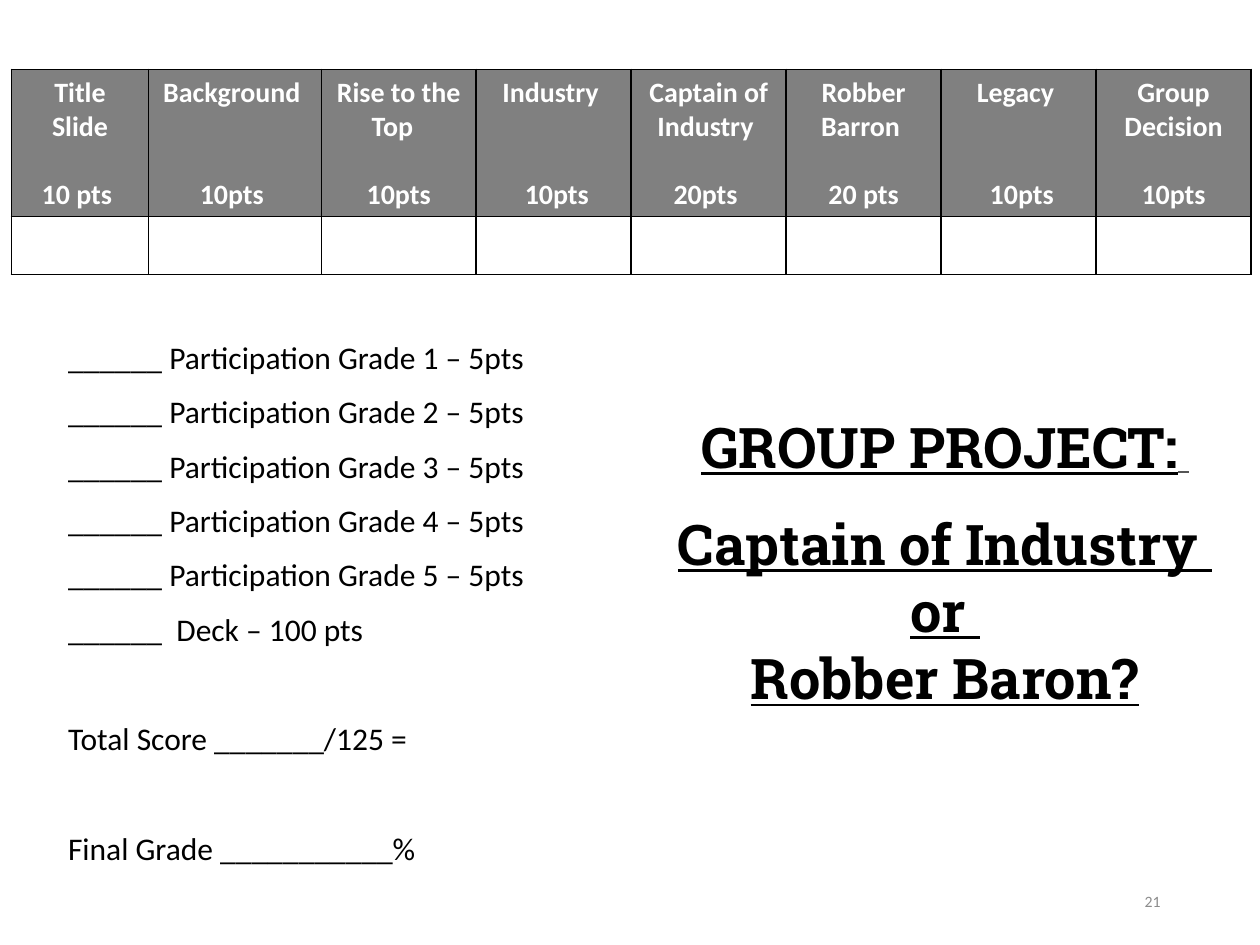
import pptx
import pptx.util
import pptx.dml.color
import pptx.enum.text
import pptx.oxml
import pptx.oxml.ns
import lxml.etree

Inches, Pt = pptx.util.Inches, pptx.util.Pt
RGBColor = pptx.dml.color.RGBColor
ALIGN = pptx.enum.text.PP_ALIGN
ANCHOR = pptx.enum.text.MSO_ANCHOR
NO_AUTOFIT = pptx.enum.text.MSO_AUTO_SIZE.NONE

BLACK = RGBColor(0x00, 0x00, 0x00)
WHITE = RGBColor(0xFF, 0xFF, 0xFF)
HEADER_GRAY = RGBColor(0x80, 0x80, 0x80)
NUMBER_GRAY = RGBColor(0x8C, 0x8C, 0x8C)
SPACE_GRAY = RGBColor(0x55, 0x55, 0x55)

# Content: rubric columns as (criterion, points, width)
RUBRIC = [
    ("Title Slide", "10 pts ", 1.09),
    ("Background ", "10pts ", 1.37),
    ("Rise to the Top  ", "10pts", 1.23),
    ("Industry ", " 10pts", 1.23),
    ("Captain of Industry ", "20pts ", 1.23),
    ("Robber Barron ", " 20 pts ", 1.23),
    ("Legacy ", " 10pts", 1.23),
    ("Group Decision", " 10pts ", 1.23),
]
ROW_HEIGHTS = [1.17, 0.46]
HEADER_LINE = 19.5  # height of one 16 pt line, in points

GRADES = [f"______ Participation Grade {n} – 5pts" for n in range(1, 6)]
GRADES.append("______  Deck – 100 pts")
TOTALS = ["Total Score _______/125 =", "Final Grade ___________%"]
TOTAL_GAP = 31.5  # one list line with its spacing, in points

TITLE_LINES = ["GROUP PROJECT:", "Captain of Industry ", "or ", "Robber Baron?"]
SLIDE_NUMBER = "21"

# Text formats
HEADER_FONT = {"name": "Calibri", "size": Pt(16), "bold": True}
LIST_FONT = {"name": "Calibri", "size": Pt(18)}
TITLE_FONT = {"name": "Roboto Slab", "size": Pt(32), "bold": True, "underline": True}
NUMBER_FONT = {"name": "Calibri", "size": Pt(9)}


def set_attributes(target, values):
    for name, value in values.items():
        setattr(target, name, value)


def add_run(paragraph, text, font, color):
    run = paragraph.add_run()
    run.text = text
    set_attributes(run.font, font)
    run.font.color.rgb = color


def add_paragraph(frame, index, text, font, color, **layout):
    paragraph = frame.add_paragraph() if index else frame.paragraphs[0]
    set_attributes(paragraph, layout)
    add_run(paragraph, text, font, color)
    return paragraph


def place(shape, left, top, width, height, anchor):
    set_attributes(shape, {"left": Inches(left), "top": Inches(top),
                           "width": Inches(width), "height": Inches(height)})
    set_attributes(shape.text_frame, {"word_wrap": True, "auto_size": NO_AUTOFIT,
                                      "vertical_anchor": anchor})
    return shape.text_frame


def format_cell(cell, fill):
    properties = cell._tc.get_or_add_tcPr()
    for side in ("lnL", "lnR", "lnT", "lnB"):
        line = pptx.oxml.parse_xml(
            f'<a:{side} {pptx.oxml.ns.nsdecls("a")} w="{Pt(1)}">'
            f'<a:solidFill><a:srgbClr val="{BLACK}"/></a:solidFill></a:{side}>')
        properties.append(line)
    cell.fill.solid()
    cell.fill.fore_color.rgb = fill


def add_rubric(slide):
    table = slide.shapes.add_table(
        len(ROW_HEIGHTS), len(RUBRIC), Inches(0.09), Inches(0.55),
        Inches(sum(width for _, _, width in RUBRIC)), Inches(sum(ROW_HEIGHTS))).table
    table.horz_banding = False
    for row, height in zip(table.rows, ROW_HEIGHTS):
        row.height = Inches(height)
    for index, (criterion, points, width) in enumerate(RUBRIC):
        table.columns[index].width = Inches(width)
        header = table.cell(0, index)
        format_cell(header, HEADER_GRAY)
        format_cell(table.cell(1, index), WHITE)
        header.margin_bottom = Inches(0.03)
        # Names of several words wrap to two lines; points sit on the fourth
        name_lines = 2 if " " in criterion.strip() else 1
        add_paragraph(header.text_frame, 0, criterion, HEADER_FONT, WHITE,
                      alignment=ALIGN.CENTER)
        add_paragraph(header.text_frame, 1, points, HEADER_FONT, WHITE,
                      alignment=ALIGN.CENTER,
                      space_before=Pt(HEADER_LINE * (3 - name_lines)))


def fill_grades(body):
    frame = place(body, 0.44, 2.61, 5, 4.34, ANCHOR.TOP)
    for index, text in enumerate(GRADES + TOTALS):
        gap = TOTAL_GAP if text in TOTALS else 0
        paragraph = add_paragraph(frame, index, text, LIST_FONT, BLACK,
                                  alignment=ALIGN.LEFT, line_spacing=1.07,
                                  space_before=Pt(gap), space_after=Pt(8))
        properties = paragraph._p.get_or_add_pPr()
        properties.set("marL", "0")
        properties.set("indent", "0")
        lxml.etree.SubElement(properties, pptx.oxml.ns.qn("a:buNone"))


def fill_title(title):
    frame = place(title, 5, 3.22, 5, 2.49, ANCHOR.TOP)
    for index, text in enumerate(TITLE_LINES):
        paragraph = add_paragraph(frame, index, text, TITLE_FONT, BLACK,
                                  alignment=ALIGN.CENTER,
                                  space_after=Pt(0 if index else 17))
        if index == 0:
            add_run(paragraph, " ", {**TITLE_FONT, "size": Pt(24)}, SPACE_GRAY)


def main():
    presentation = pptx.Presentation()
    presentation.slide_width = Inches(10)
    presentation.slide_height = Inches(7.5)
    slide = presentation.slides.add_slide(presentation.slide_layouts[1])

    # Slide number
    number = slide.shapes.add_textbox(0, 0, 0, 0)
    frame = place(number, 7.06, 6.95, 2.25, 0.4, ANCHOR.MIDDLE)
    add_paragraph(frame, 0, SLIDE_NUMBER, NUMBER_FONT, NUMBER_GRAY, alignment=ALIGN.RIGHT)

    fill_grades(slide.placeholders[1])
    add_rubric(slide)
    fill_title(slide.shapes.title)
    presentation.save("out.pptx")


if __name__ == "__main__":
    main()
